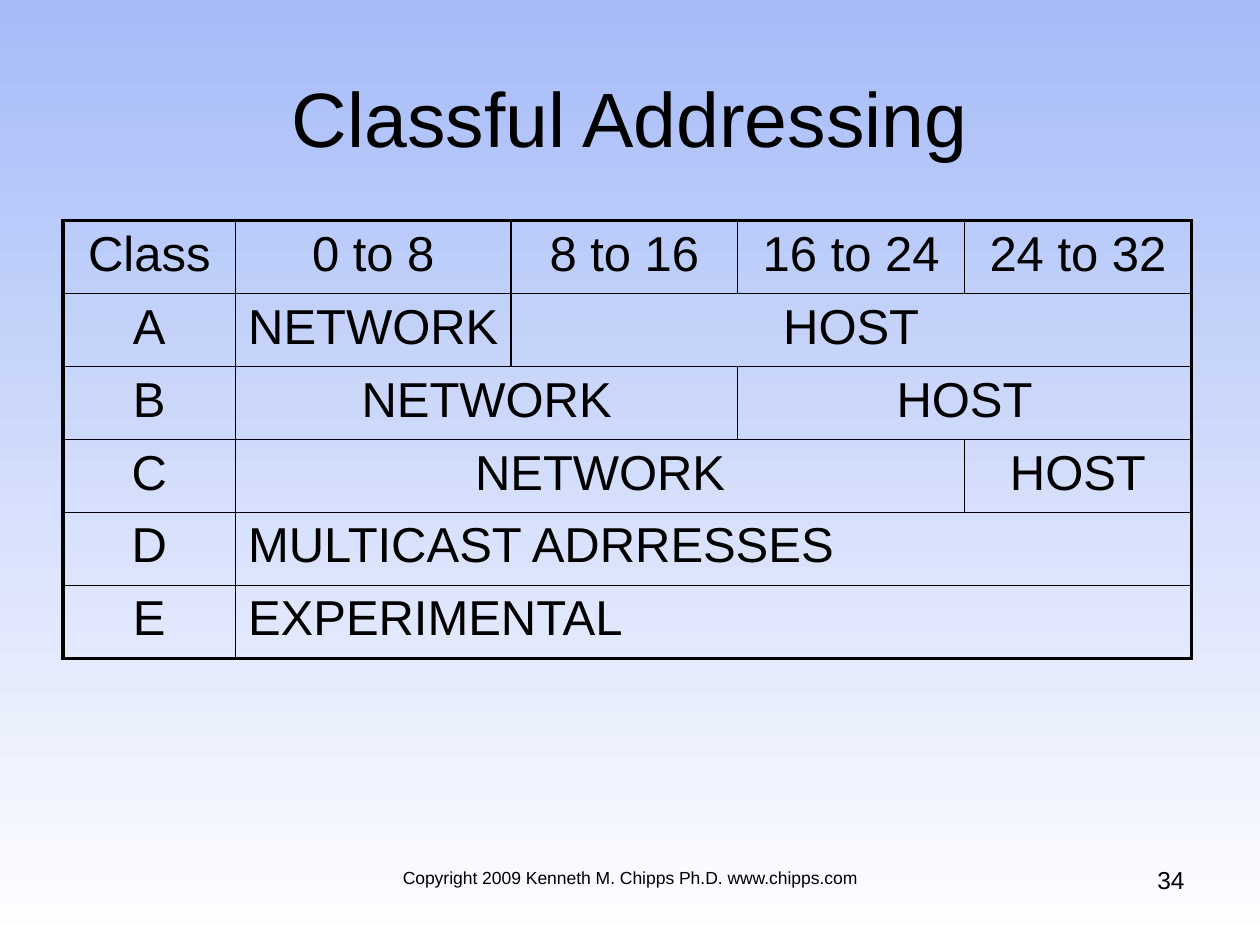
from dataclasses import dataclass
from lxml.etree import SubElement
from pptx import Presentation
from pptx.dml.color import RGBColor
from pptx.enum.text import MSO_ANCHOR, PP_ALIGN
from pptx.oxml.ns import qn
from pptx.util import Pt


@dataclass(frozen=True)
class Theme:
    font: str = "Arial"
    ink: str = "000000"
    sky: str = "A6BBF8"
    white: str = "FFFFFF"
    title: int = 44
    body: int = 28
    number: int = 14
    footer: int = 10
    frame: float = 2.25
    rule: float = 1


theme = Theme()


def write(tf, text, size, align):
    p = tf.paragraphs[0]
    p.alignment = align
    r = p.add_run()
    r.text = text
    r.font.name = theme.font
    r.font.size = Pt(size)
    r.font.color.rgb = RGBColor.from_string(theme.ink)


def add_border(cell, side, width):
    ln = SubElement(cell._tc.get_or_add_tcPr(), qn(f"a:ln{side}"), w=str(Pt(width)))
    fill = SubElement(ln, qn("a:solidFill"))
    SubElement(fill, qn("a:srgbClr"), val=theme.ink)


prs = Presentation()
prs.slide_width, prs.slide_height = Pt(720), Pt(540)
s = prs.slides.add_slide(prs.slide_layouts[6])

bg = s.background.fill
bg.gradient()
bg.gradient_angle = 270
for stop, color in zip(bg.gradient_stops, (theme.sky, theme.white)):
    stop.color.rgb = RGBColor.from_string(color)

labels = [
    ("Copyright 2009 Kenneth M. Chipps Ph.D. www.chipps.com",
     (216, 492, 288, 37.5), theme.footer, PP_ALIGN.CENTER, MSO_ANCHOR.TOP),
    ("34", (516, 490.5, 168, 37.5), theme.number, PP_ALIGN.RIGHT, MSO_ANCHOR.TOP),
    ("Classful Addressing", (36, 21.6, 648, 90), theme.title, PP_ALIGN.CENTER, MSO_ANCHOR.MIDDLE),
]
for text, box, size, align, anchor in labels:
    tf = s.shapes.add_textbox(*map(Pt, box)).text_frame
    tf.word_wrap = True
    tf.vertical_anchor = anchor
    write(tf, text, size, align)

rows = [
    [("Class", 1), ("0 to 8", 1), ("8 to 16", 1), ("16 to 24", 1), ("24 to 32", 1)],
    [("A", 1), ("NETWORK", 1), ("HOST", 3)],
    [("B", 1), ("NETWORK", 2), ("HOST", 2)],
    [("C", 1), ("NETWORK", 3), ("HOST", 1)],
    [("D", 1), ("MULTICAST ADRRESSES", 4)],
    [("E", 1), ("EXPERIMENTAL", 4)],
]
widths = [98.6, 157.4, 129.6, 129.6, 129.6]
row_height = 41.7
last_row, last_col = len(rows) - 1, len(widths) - 1

table = s.shapes.add_table(len(rows), len(widths), Pt(36), Pt(126),
                           Pt(sum(widths)), Pt(row_height * len(rows))).table
table.first_row = table.horz_banding = False
for column, width in zip(table.columns, widths):
    column.width = Pt(width)

for i, row in enumerate(rows):
    table.rows[i].height = Pt(row_height)
    start = 0
    for text, span in row:
        end = start + span - 1
        if span > 1:
            table.cell(i, start).merge(table.cell(i, end))
        align = PP_ALIGN.LEFT if span == last_col else PP_ALIGN.CENTER
        write(table.cell(i, start).text_frame, text, theme.body, align)
        for j in range(start, end + 1):
            cell = table.cell(i, j)
            edges = {"L": j == 0, "R": end == last_col, "T": i == 0, "B": i == last_row}
            for side, outer in edges.items():
                add_border(cell, side, theme.frame if outer else theme.rule)
            cell.fill.background()
        start = end + 1

prs.save("out.pptx")
